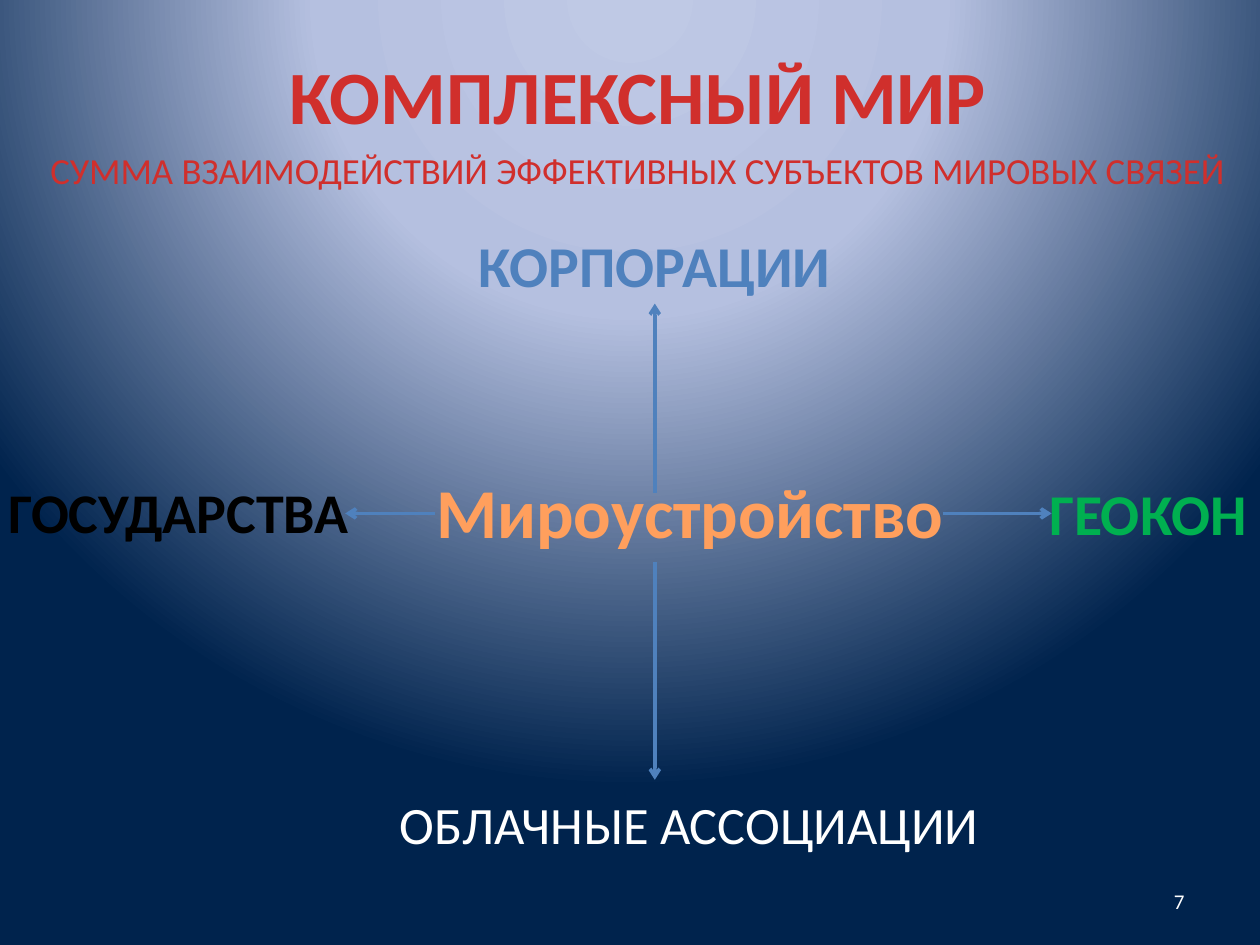
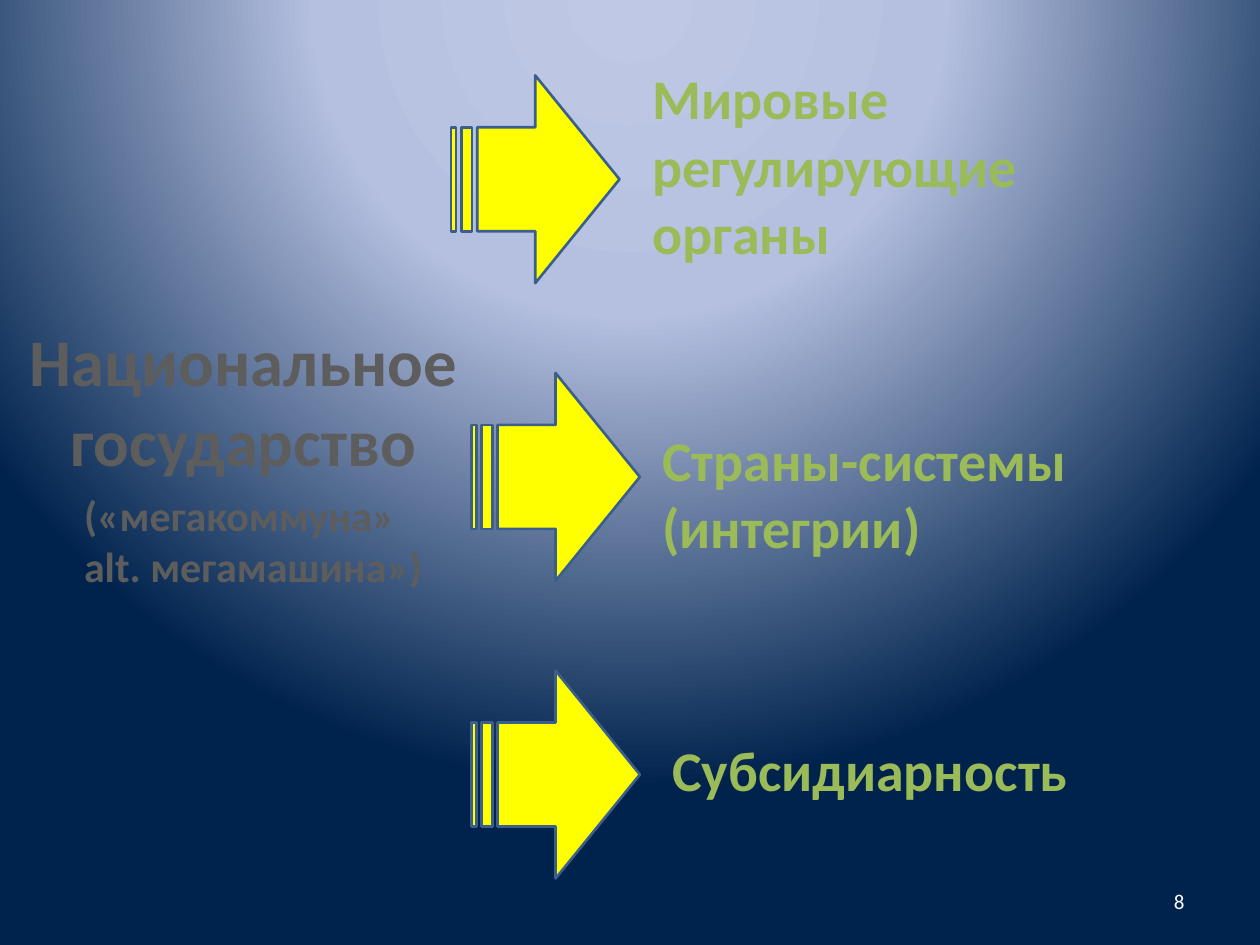
from lxml import etree
from pptx import Presentation
from pptx import util as u
from pptx.dml.color import RGBColor
from pptx.enum import shapes, text
from pptx.oxml.ns import qn

FONT = "Calibri"
RED, ORANGE, BLUE, GREEN = "D02F2C", "FF9F5D", "4F81BD", "00B050"
OLIVE, GRAY, YELLOW, EDGE = "9BBB59", "5D5D5D", "FFFF00", "3A5F8C"
BLACK, WHITE = "000000", "FFFFFF"
BACKDROP = [(0, "BFC9E5"), (40, "B5C0E0"), (100, "00234D")]
LEFT, CENTER, RIGHT = text.PP_ALIGN.LEFT, text.PP_ALIGN.CENTER, text.PP_ALIGN.RIGHT
TOP, MIDDLE = text.MSO_ANCHOR.TOP, text.MSO_ANCHOR.MIDDLE


def rgb(color):
    return RGBColor.from_string(color)


def cm(*values):
    return [u.Cm(v) for v in values]


def write(tf, content, size=32, color=WHITE, bold=True, align=LEFT, after=0, indent=0):
    p = tf.paragraphs[0]
    if p.runs:
        p = tf.add_paragraph()
    p.alignment = align
    p.space_after = u.Pt(after)
    if indent:
        p._p.get_or_add_pPr().set("marL", str(u.Cm(indent)))
    r = p.add_run()
    r.text = content
    r.font.name = FONT
    r.font.size = u.Pt(size)
    r.font.bold = bold
    r.font.color.rgb = rgb(color)


def frame(sp, anchor):
    tf = sp.text_frame
    tf.word_wrap = True
    tf.auto_size = text.MSO_AUTO_SIZE.NONE
    tf.vertical_anchor = anchor
    return tf


def label(s, box, content, anchor=MIDDLE, **fmt):
    tf = frame(s.shapes.add_textbox(*cm(*box)), anchor)
    for line in content.split("\n"):
        write(tf, line, **fmt)


def place_title(s, box, anchor):
    sp = s.shapes.title
    sp.left, sp.top, sp.width, sp.height = cm(*box)
    return frame(sp, anchor)


def arrow(s, x1, y1, x2, y2):
    line = s.shapes.add_connector(shapes.MSO_CONNECTOR.STRAIGHT, *cm(x1, y1, x2, y2))
    line.line.color.rgb = rgb(BLUE)
    line.line.width = u.Pt(2)
    etree.SubElement(line.line._get_or_add_ln(), qn("a:tailEnd"), type="arrow")
    etree.SubElement(line._element.spPr, qn("a:effectLst"))


def set_backdrop(master):
    fill = master.background.fill
    fill.solid()
    fill.fore_color.rgb = rgb(WHITE)
    solid = master.element.xpath(".//p:bgPr/a:solidFill")[0]
    grad = etree.Element(qn("a:gradFill"), rotWithShape="1")
    stops = etree.SubElement(grad, qn("a:gsLst"))
    for pos, color in BACKDROP:
        gs = etree.SubElement(stops, qn("a:gs"), pos=str(pos * 1000))
        etree.SubElement(gs, qn("a:srgbClr"), val=color)
    circle = etree.SubElement(grad, qn("a:path"))
    circle.set("path", "circle")
    etree.SubElement(circle, qn("a:fillToRect"), l="50000", t="-80000", r="50000", b="180000")
    solid.getparent().replace(solid, grad)


def new_slide(prs, number):
    s = prs.slides.add_slide(prs.slide_layouts[5])
    label(s, (18.21, 17.65, 5.92, 1.02), str(number), size=12, bold=False, align=RIGHT)
    return s


def compass(s, x, y):
    label(s, (x - 4.89, y - 1.03, 11.2, 2.64), "Мироустройство", TOP,
          size=40, color=ORANGE, align=CENTER)
    for x1, y1, x2, y2 in [(0, -0.42, 0, -4.23), (0, 0.98, 0, 5.37),
                           (5.8, 0, 8, 0), (-4.44, 0, -6.24, 0)]:
        arrow(s, x + x1, y + y1, x + x2, y + y2)
    label(s, (x - 4.21, y - 5.85, 8.41, 1.68), "КОРПОРАЦИИ", TOP,
          size=33, color=BLUE, align=CENTER)
    label(s, (x - 6.55, y + 4.66, 14.5, 3.18), "ОБЛАЧНЫЕ АССОЦИАЦИИ",
          size=30, bold=False, align=CENTER)
    label(s, (x + 6.89, y - 1.61, 6.1, 3.18), "ГЕОКОН", size=33, color=GREEN, align=CENTER)
    label(s, (x - 13.28, y - 1.64, 10.01, 3.18), "ГОСУДАРСТВА", color=BLACK)


def complex_world(prs):
    s = new_slide(prs, 7)
    tf = place_title(s, (0.36, 0.13, 24.99, 4.6), MIDDLE)
    write(tf, "КОМПЛЕКСНЫЙ МИР", size=43, color=RED, align=CENTER, after=5)
    write(tf, "СУММА ВЗАИМОДЕЙСТВИЙ ЭФФЕКТИВНЫХ СУБЪЕКТОВ МИРОВЫХ СВЯЗЕЙ",
          size=21, color=RED, bold=False, align=CENTER)
    compass(s, 13.2, 10.35)


def striped_arrow(s, box):
    sp = s.shapes.add_shape(shapes.MSO_SHAPE.STRIPED_RIGHT_ARROW, *cm(*box))
    sp.shadow.inherit = False
    sp.fill.solid()
    sp.fill.fore_color.rgb = rgb(YELLOW)
    sp.line.color.rgb = rgb(EDGE)
    sp.line.width = u.Pt(1.5)


def directions(s, x, y):
    rows = [
        ("Мировые регулирующие\nорганы", 0, 0.21, 3.18),
        ("Страны-системы\n(интегрии)", 0.41, -0.59, 5.99),
        ("Субсидиарность", 0.41, 0.4, 3.18),
    ]
    for i, (content, shift, drop, height) in enumerate(rows):
        top = y + 6 * i
        striped_arrow(s, (x + shift, top, 3.4, 4.19))
        label(s, (x + 3.81 + 0.2 * i, top + drop, 10.59, height), content, color=OLIVE)


def national_state(prs):
    s = new_slide(prs, 8)
    tf = place_title(s, (-0.79, 6.32, 11.4, 6.43), TOP)
    write(tf, "Национальное государство", size=38, color=GRAY, align=CENTER, after=6)
    for line in ("(«мегакоммуна»", "alt. мегамашина»)"):
        write(tf, line, size=24, color=GRAY, indent=2.23)
    directions(s, 9.09, 1.52)


def main():
    prs = Presentation()
    prs.slide_width, prs.slide_height = cm(25.4, 19.05)
    set_backdrop(prs.slide_master)
    complex_world(prs)
    national_state(prs)
    prs.save("out.pptx")


if __name__ == "__main__":
    main()
